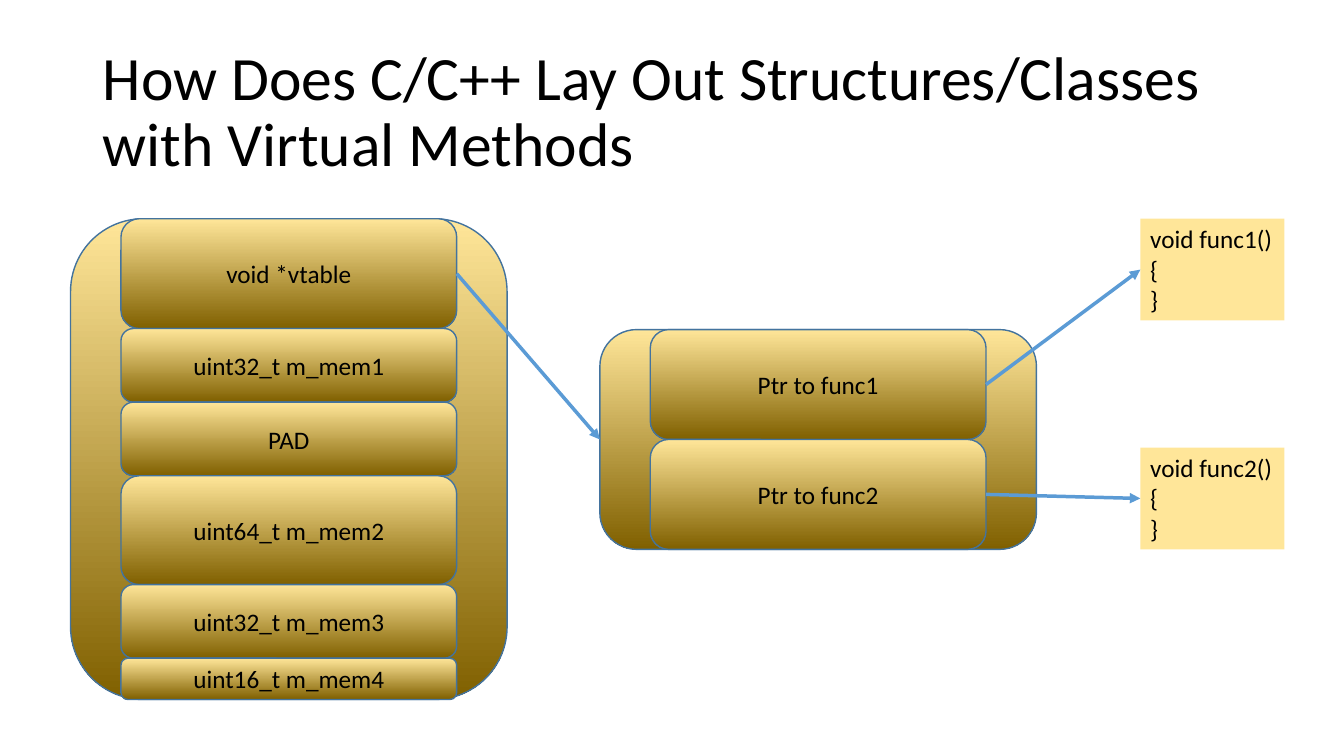
from lxml import etree
from pptx import Presentation
from pptx.dml.color import RGBColor
from pptx.enum.shapes import MSO_CONNECTOR, MSO_SHAPE
from pptx.enum.text import MSO_ANCHOR, MSO_AUTO_SIZE, PP_ALIGN
from pptx.oxml.ns import qn
from pptx.util import Inches, Pt

TITLE = "How Does C/C++ Lay Out Structures/Classes\vwith Virtual Methods"
OBJECT = (0.7, 2.17, [
    ("void *vtable", 1.09),
    ("uint32_t m_mem1", 0.73),
    ("PAD", 0.73),
    ("uint64_t m_mem2", 1.08),
    ("uint32_t m_mem3", 0.73),
    ("uint16_t m_mem4", 0.41),
])
VTABLE = (5.95, 3.27, [("Ptr to func1", 1.09), ("Ptr to func2", 1.09)])
FUNCTIONS = [("void func1()\n{\n}", 2.17), ("void func2()\n{\n}", 4.44)]
FRAME_W, FIELD_W = 4.33, 3.33
FUNC_X, FUNC_W, FUNC_H = 11.31, 1.43, 1.01
LEFT, RIGHT = 1, 3
COLORS = {
    "gold": "FFE699",
    "brown": "806000",
    "outline": "43739E",
    "arrow": "5B9BD5",
    "text": "000000",
}


def rgb(name):
    """Return the named colour."""
    return RGBColor.from_string(COLORS[name])


def write(tf, text, size, align=PP_ALIGN.LEFT, anchor=MSO_ANCHOR.MIDDLE, wrap=True):
    """Put formatted text in a frame."""
    tf.text = text
    tf.word_wrap = wrap
    tf.vertical_anchor = anchor
    for p in tf.paragraphs:
        p.alignment = align
        for r in p.runs:
            r.font.name = "Calibri"
            r.font.size = Pt(size)
            r.font.color.rgb = rgb("text")


def add_block(group, x, y, w, h, text=""):
    """Add a rounded block with a gold gradient."""
    sp = group.shapes.add_shape(
        MSO_SHAPE.ROUNDED_RECTANGLE, Inches(x), Inches(y), Inches(w), Inches(h))
    sp.shadow.inherit = False
    sp.fill.gradient()
    sp.fill.gradient_angle = 270
    for stop, name in zip(sp.fill.gradient_stops, ("gold", "brown")):
        stop.color.rgb = rgb(name)
    sp.line.color.rgb = rgb("outline")
    sp.line.width = Pt(1)
    if text:
        write(sp.text_frame, text, 18, PP_ALIGN.CENTER)
    return sp


def add_layout(s, x, y, fields):
    """Stack the fields inside a frame; return the frame and the fields."""
    group = s.shapes.add_group_shape()
    frame = add_block(group, x, y, FRAME_W, sum(h for _, h in fields))
    blocks = []
    for text, h in fields:
        blocks.append(add_block(group, x + (FRAME_W - FIELD_W) / 2, y, FIELD_W, h, text))
        y += h
    return frame, blocks


def add_function(s, text, y):
    """Add a flat box with a function body."""
    sp = s.shapes.add_shape(
        MSO_SHAPE.RECTANGLE, Inches(FUNC_X), Inches(y), Inches(FUNC_W), Inches(FUNC_H))
    sp.shadow.inherit = False
    sp.fill.solid()
    sp.fill.fore_color.rgb = rgb("gold")
    sp.line.fill.background()
    write(sp.text_frame, text, 18, anchor=MSO_ANCHOR.TOP, wrap=False)
    sp.text_frame.auto_size = MSO_AUTO_SIZE.SHAPE_TO_FIT_TEXT
    return sp


def add_arrow(s, source, target):
    """Join the right side of source to the left side of target."""
    c = s.shapes.add_connector(MSO_CONNECTOR.STRAIGHT, 0, 0, 0, 0)
    c.begin_connect(source, RIGHT)
    c.end_connect(target, LEFT)
    c.line.color.rgb = rgb("arrow")
    c.line.width = Pt(2.5)
    etree.SubElement(c.line._get_or_add_ln(), qn("a:tailEnd"), type="triangle")
    etree.SubElement(c._element.spPr, qn("a:effectLst"))


def main():
    """Build the slide and save it."""
    prs = Presentation()
    prs.slide_width, prs.slide_height = Inches(13.33), Inches(7.5)
    s = prs.slides.add_slide(prs.slide_layouts[6])

    title = s.shapes.add_textbox(Inches(0.92), Inches(0.4), Inches(11.5), Inches(1.45))
    write(title.text_frame, TITLE, 44)
    title.text_frame.paragraphs[0].line_spacing = 0.9

    _, members = add_layout(s, *OBJECT)
    table, pointers = add_layout(s, *VTABLE)
    add_arrow(s, members[0], table)
    for pointer, (text, y) in zip(pointers, FUNCTIONS):
        add_arrow(s, pointer, add_function(s, text, y))

    prs.save("out.pptx")


if __name__ == "__main__":
    main()
